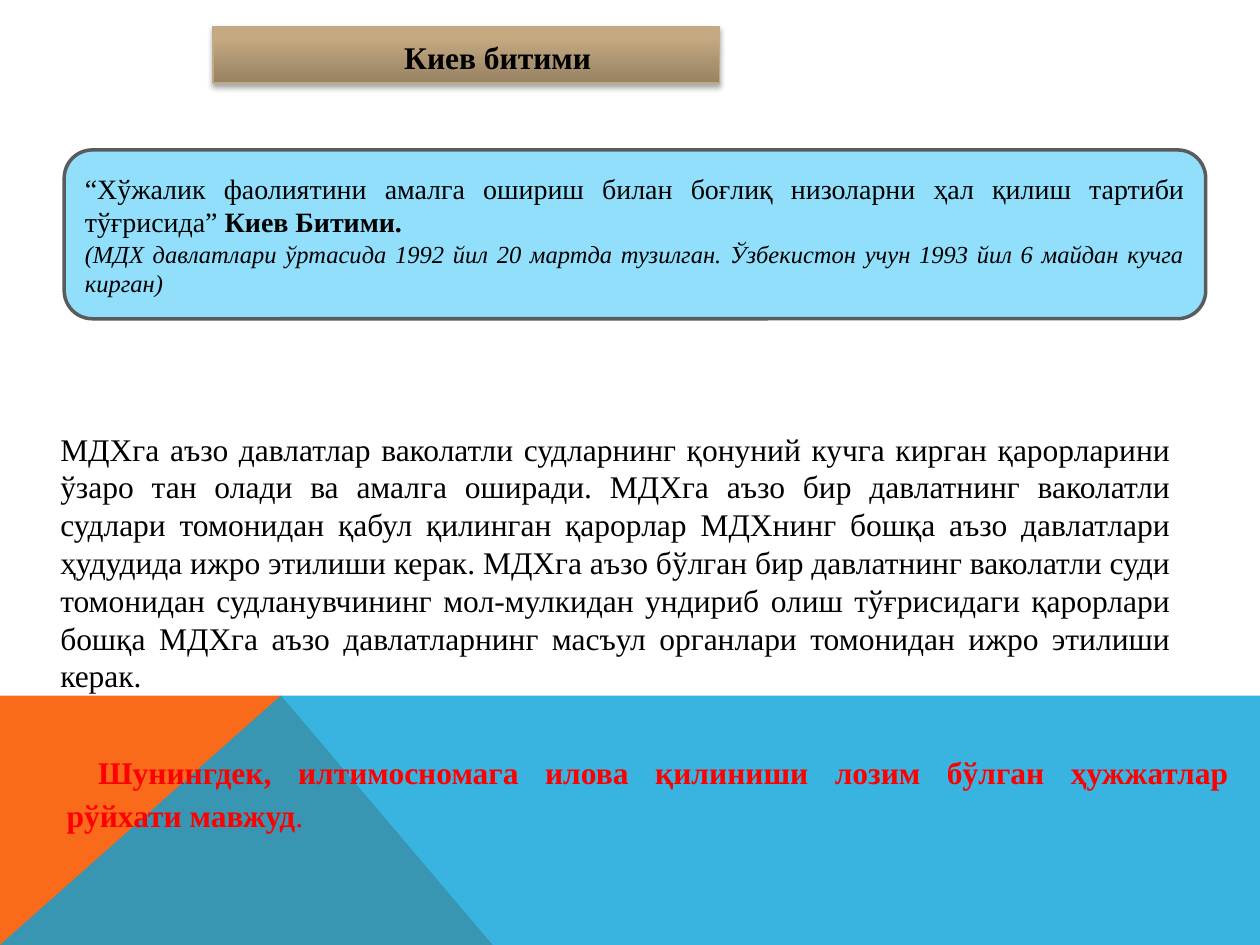
"""Build a slide on the Kyiv agreement with a banner, a card and two notes."""
import pptx
import pptx.util
import pptx.dml.color
import pptx.enum.shapes
import pptx.enum.text
import pptx.oxml
import pptx.oxml.ns

Inches, Pt = pptx.util.Inches, pptx.util.Pt
RGB = pptx.dml.color.RGBColor
Kind = pptx.enum.shapes.MSO_SHAPE
Align = pptx.enum.text.PP_ALIGN
Anchor = pptx.enum.text.MSO_ANCHOR

BLACK, RED = RGB(0, 0, 0), RGB(0xFF, 0, 0)
ORANGE, BLUE = RGB(0xF9, 0x6A, 0x1B), RGB(0x08, 0xA1, 0xD9)
BROWN, TAN, EDGE = RGB(0x97, 0x82, 0x63), RGB(0xC4, 0xA9, 0x81), RGB(0xBF, 0xA9, 0x89)
SKY, GRAY = RGB(0x91, 0xDF, 0xFB), RGB(0x5A, 0x5B, 0x5D)
FONT = "Times New Roman"
WIDE, HIGH = 10, 7.5
TOP, PEAK, FOOT = 5.52, 2.23, 3.91

TITLE = [dict(runs=[("Киев битими", 18, "b")], align=Align.CENTER, left=0.5, space=1.15)]
CARD = [
    dict(runs=[("“Хўжалик фаолиятини амалга ошириш билан боғлиқ низоларни ҳал қилиш тартиби тўғрисида” ", 16, ""),
               ("Киев Битими.", 16, "b")]),
    dict(runs=[("(МДХ давлатлари ўртасида 1992 йил 20 мартда тузилган. "
                "Ўзбекистон учун 1993 йил 6 майдан кучга кирган)", 14, "i")]),
]
BODY = [dict(runs=[(
    "МДХга аъзо давлатлар ваколатли судларнинг қонуний кучга кирган қарорларини ўзаро тан олади "
    "ва амалга оширади. МДХга аъзо бир давлатнинг ваколатли судлари томонидан қабул қилинган "
    "қарорлар МДХнинг бошқа аъзо давлатлари ҳудудида ижро этилиши керак. МДХга аъзо бўлган бир "
    "давлатнинг ваколатли суди томонидан судланувчининг мол-мулкидан ундириб олиш тўғрисидаги "
    "қарорлари бошқа МДХга аъзо давлатларнинг масъул органлари томонидан ижро этилиши керак.", 18, "")])]
NOTE = [dict(runs=[("Шунингдек, илтимосномага илова қилиниши лозим бўлган ҳужжатлар рўйхати мавжуд", 18, "b"),
                   (".", 18, "")], color=RED, first=0.25, space=1.15)]

BANDS = [
    ([(0, HIGH), (0, TOP), (PEAK, TOP), (FOOT, HIGH)], ORANGE, 100),
    ([(0, HIGH), (PEAK, TOP), (WIDE, TOP), (WIDE, HIGH)], BLUE, 80),
]
SHADE = (
    '<a:effectLst %s><a:outerShdw blurRad="40000" dist="23000" dir="5400000" rotWithShape="0">'
    '<a:srgbClr val="000000"><a:alpha val="35000"/></a:srgbClr></a:outerShdw></a:effectLst>'
    % pptx.oxml.ns.nsdecls("a")
)


def add_band(slide, points, color, alpha):
    pen = slide.shapes.build_freeform(*map(Inches, points[0]), scale=1.0)
    pen.add_line_segments([tuple(map(Inches, spot)) for spot in points[1:]], close=True)
    band = pen.convert_to_shape()
    band.shadow.inherit = False
    band.line.fill.background()
    band.fill.solid()
    band.fill.fore_color.rgb = color
    tone = band.fill._xPr.find(".//" + pptx.oxml.ns.qn("a:srgbClr"))
    tone.append(pptx.oxml.parse_xml(
        '<a:alpha %s val="%d"/>' % (pptx.oxml.ns.nsdecls("a"), alpha * 1000)))


def write(shape, paras, anchor=Anchor.TOP):
    frame = shape.text_frame
    frame.word_wrap = True
    frame.vertical_anchor = anchor
    for spot, item in enumerate(paras):
        para = frame.add_paragraph() if spot else frame.paragraphs[0]
        para.alignment = item.get("align", Align.JUSTIFY)
        para.line_spacing = item.get("space", 1.0)
        props = para._p.get_or_add_pPr()
        props.set("marL", str(Inches(item.get("left", 0))))
        props.set("indent", str(Inches(item.get("first", 0))))
        for text, size, style in item["runs"]:
            run = para.add_run()
            run.text = text
            run.font.name, run.font.size = FONT, Pt(size)
            run.font.bold, run.font.italic = "b" in style, "i" in style
            run.font.color.rgb = item.get("color", BLACK)


def add_box(slide, kind, area, edge, width):
    box = slide.shapes.add_shape(kind, *map(Inches, area))
    box.shadow.inherit = False
    box.line.color.rgb, box.line.width = edge, Pt(width)
    return box


def main():
    deck = pptx.Presentation()
    deck.slide_width, deck.slide_height = Inches(WIDE), Inches(HIGH)
    slide = deck.slides.add_slide(deck.slide_layouts[6])
    for band in BANDS:
        add_band(slide, *band)

    title = add_box(slide, Kind.RECTANGLE, (1.69, 0.21, 4.02, 0.45), EDGE, 0.75)
    title.fill.gradient()
    title.fill.gradient_angle = 90
    for stop, (color, place) in zip(title.fill.gradient_stops, [(BROWN, 0), (TAN, 0.8)]):
        stop.color.rgb, stop.position = color, place
    props = title._element.spPr
    props.remove(props.find(pptx.oxml.ns.qn("a:effectLst")))
    props.append(pptx.oxml.parse_xml(SHADE))
    write(title, TITLE)

    for area, paras in [((0.38, 3.36, 9.01, 2.22), BODY), ((0.43, 5.88, 9.42, 0.78), NOTE)]:
        write(slide.shapes.add_textbox(*map(Inches, area)), paras)

    card = add_box(slide, Kind.ROUNDED_RECTANGLE, (0.51, 1.19, 9.06, 1.34), GRAY, 2)
    card.fill.solid()
    card.fill.fore_color.rgb = SKY
    write(card, CARD, Anchor.MIDDLE)
    deck.save("out.pptx")


if __name__ == "__main__":
    main()
